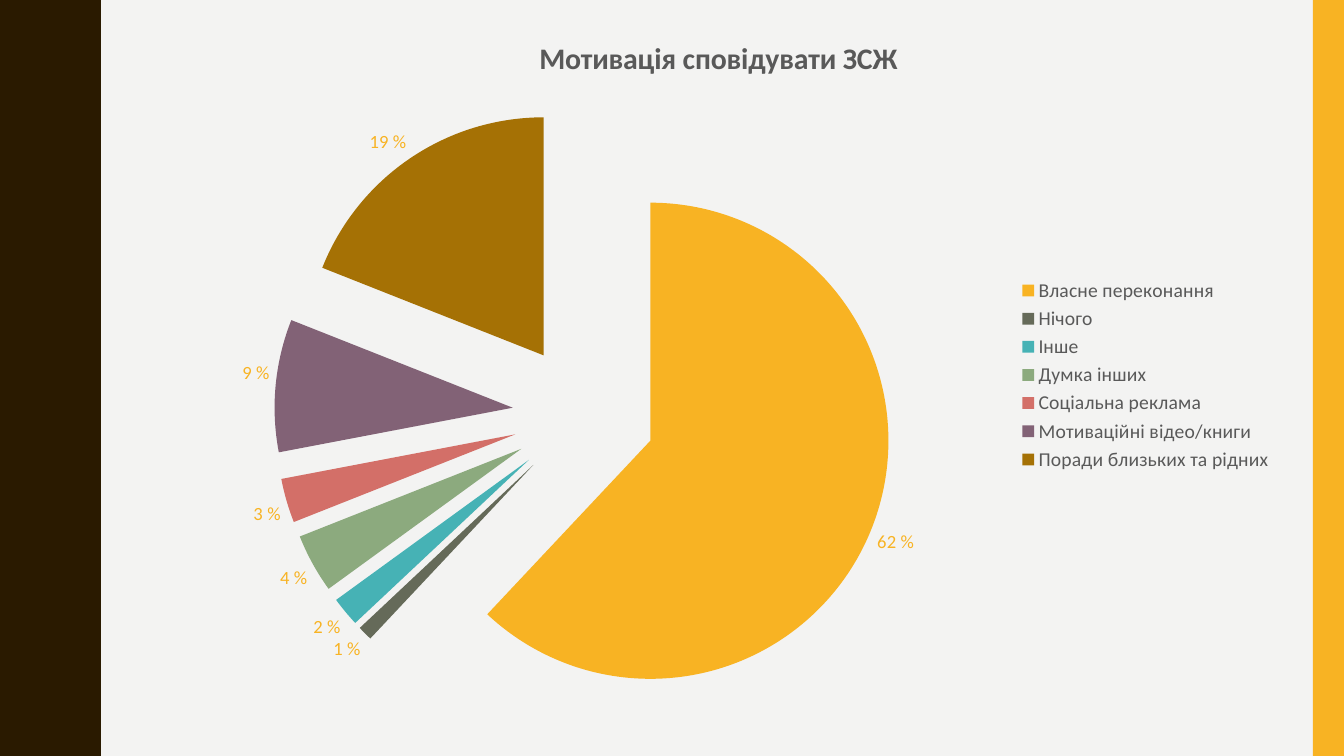
from lxml import etree
from pptx import Presentation
from pptx import util as u
from pptx.chart.data import CategoryChartData
from pptx.dml.color import RGBColor
from pptx.enum import chart as ch, shapes
from pptx.oxml import parse_xml
from pptx.oxml.ns import nsdecls, qn


def paint(fill, color):
    fill.solid()
    fill.fore_color.rgb = RGBColor.from_string(color)


def style(font, size, color, bold=False):
    font.name = "Calibri"
    font.size = u.Pt(size)
    font.bold = bold
    font.color.rgb = RGBColor.from_string(color)


prs = Presentation()
prs.slide_width = u.Inches(13.33)
prs.slide_height = u.Inches(7.5)
s = prs.slides.add_slide(prs.slide_layouts[6])
paint(s.background.fill, "F3F3F2")

rise = [(0.78, 0), (0.78, 0.07), (0.79, 0.14), (0.8, 0.2), (0.81, 0.25),
        (0.83, 0.29), (0.85, 0.33), (0.87, 0.38), (0.89, 0.42), (0.91, 0.46),
        (0.93, 0.5), (0.95, 0.55), (0.96, 0.61), (0.97, 0.68), (0.97, 0.75)]
period = 1.5
wave = rise + [(x, period - y) for x, y in reversed(rise[:-1])]
edge = [(x, y + n * period) for n in range(5) for x, y in wave]
builder = s.shapes.build_freeform(0, 0, scale=u.Inches(1))
builder.add_line_segments(edge + [(0, 7.5)], close=True)
border = builder.convert_to_shape()
stripe = s.shapes.add_shape(shapes.MSO_SHAPE.RECTANGLE, u.Inches(13.02), 0,
                            u.Inches(0.31), u.Inches(7.5))
for sp, color in ((border, "2A1A00"), (stripe, "F8B323")):
    sp.shadow.inherit = False
    paint(sp.fill, color)
    sp.line.fill.background()

motives = [
    ("Власне переконання", 62, "F8B323"),
    ("Нічого", 1, "656A59"),
    ("Інше", 2, "46B2B5"),
    ("Думка інших", 4, "8CAA7E"),
    ("Соціальна реклама", 3, "D36F68"),
    ("Мотиваційні відео/книги", 9, "826276"),
    ("Поради близьких та рідних", 19, "A57105"),
]
heading = "Мотивація сповідувати ЗСЖ"
data = CategoryChartData()
data.categories = [name for name, value, color in motives]
data.add_series(heading, [value for name, value, color in motives])
chart = s.shapes.add_chart(ch.XL_CHART_TYPE.PIE, u.Inches(1.52), u.Inches(0.12),
                           u.Inches(11.21), u.Inches(7.2), data).chart
style(chart.font, 10, "000000")

chart.has_title = True
chart.chart_title.include_in_layout = False
tf = chart.chart_title.text_frame
tf.text = heading
style(tf.paragraphs[0].runs[0].font, 21.3, "595959", True)

chart.has_legend = True
chart.legend.position = ch.XL_LEGEND_POSITION.RIGHT
chart.legend.include_in_layout = False
style(chart.legend.font, 14, "595959")

plot = chart.plots[0]
plot.vary_by_categories = True
series = plot.series[0]
explosion = parse_xml(f'<c:explosion {nsdecls("c")} val="30"/>')
series._element.find(qn("c:tx")).addnext(explosion)
for i, (name, value, color) in enumerate(motives):
    paint(series.points[i].format.fill, color)

plot.has_data_labels = True
labels = plot.data_labels
labels.show_value = True
labels.show_percentage = False
labels.number_format = '0" %"'
labels.number_format_is_linked = False
labels.position = ch.XL_LABEL_POSITION.OUTSIDE_END
style(labels.font, 13.3, "F8B323")

area = chart._chartSpace.chart.plotArea
for old in area.findall(qn("c:layout")):
    area.remove(old)
layout = etree.Element(qn("c:layout"))
manual = etree.SubElement(layout, qn("c:manualLayout"))
for tag, val in (("layoutTarget", "inner"), ("xMode", "edge"), ("yMode", "edge"),
                 ("x", "0.107"), ("y", "0.128"), ("w", "0.548"), ("h", "0.853")):
    etree.SubElement(manual, qn(f"c:{tag}")).set("val", val)
area.insert(0, layout)

prs.save("out.pptx")
